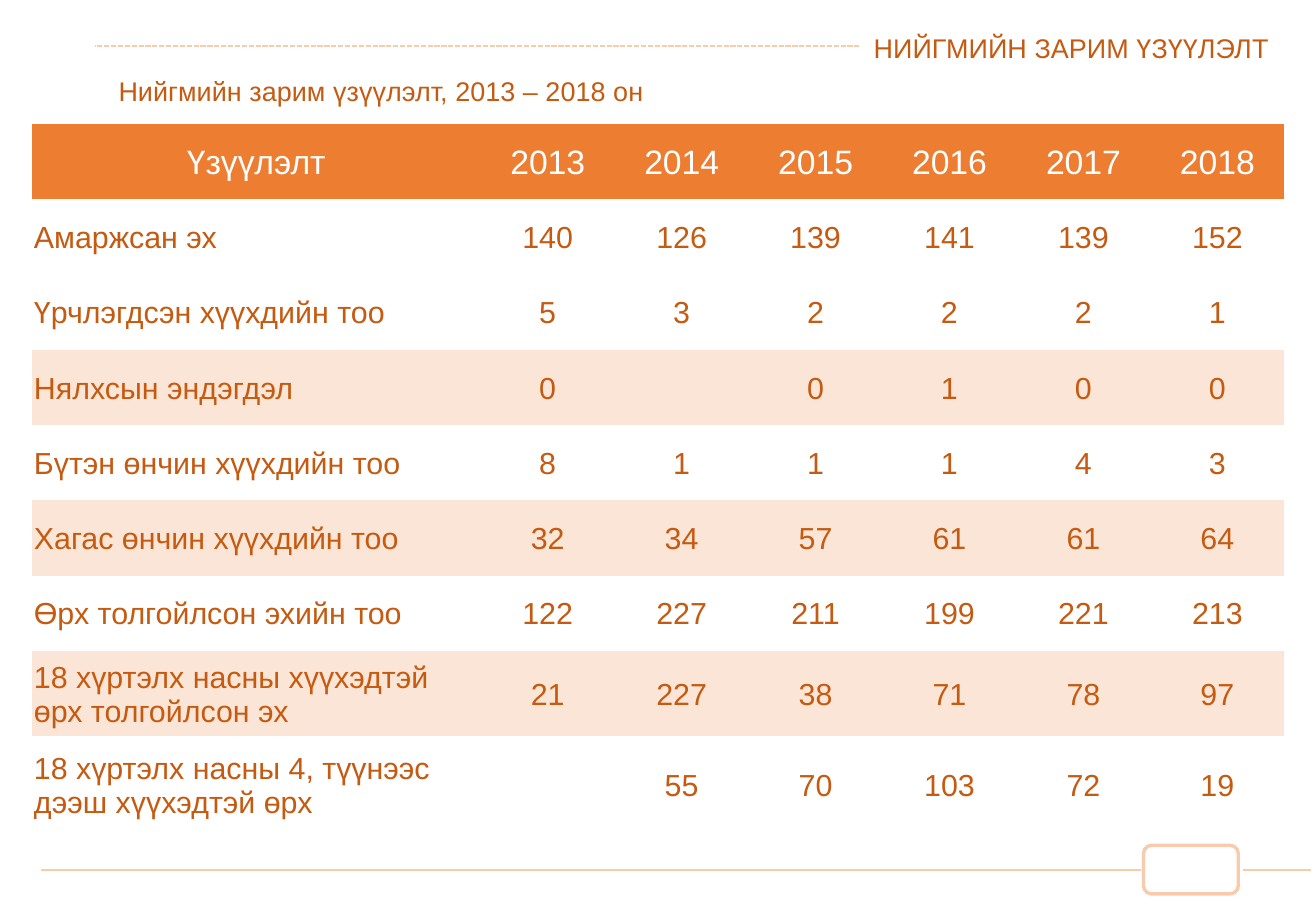
from pptx import Presentation
from pptx.dml.color import RGBColor
from pptx.enum.dml import MSO_LINE
from pptx.enum.shapes import MSO_CONNECTOR, MSO_SHAPE
from pptx.enum.text import MSO_ANCHOR, MSO_AUTO_SIZE, PP_ALIGN
from pptx.oxml.ns import qn
from pptx.util import Inches, Pt
from lxml import etree

# Content
TITLE = "НИЙГМИЙН ЗАРИМ ҮЗҮҮЛЭЛТ"
SUBTITLE = "Нийгмийн зарим үзүүлэлт, 2013 – 2018 он"
ROWS = [
    ("Үзүүлэлт", 2013, 2014, 2015, 2016, 2017, 2018),
    ("Амаржсан эх", 140, 126, 139, 141, 139, 152),
    ("Үрчлэгдсэн хүүхдийн тоо", 5, 3, 2, 2, 2, 1),
    ("Нялхсын эндэгдэл", 0, None, 0, 1, 0, 0),
    ("Бүтэн өнчин хүүхдийн тоо", 8, 1, 1, 1, 4, 3),
    ("Хагас өнчин хүүхдийн тоо", 32, 34, 57, 61, 61, 64),
    ("Өрх толгойлсон эхийн тоо", 122, 227, 211, 199, 221, 213),
    ("18 хүртэлх насны хүүхэдтэй өрх толгойлсон эх", 21, 227, 38, 71, 78, 97),
    ("18 хүртэлх насны 4, түүнээс дээш хүүхэдтэй өрх", None, 55, 70, 103, 72, 19),
]
SHADED_ROWS = (3, 5, 7)

THEME = {
    "font": "Arial", "caption": 8, "header": 10, "body": 9,
    "text": RGBColor.from_string("C55A11"),
    "accent": RGBColor.from_string("ED7D31"),
    "band": RGBColor.from_string("FBE5D6"),
    "rule": RGBColor.from_string("F8CBAD"),
    "white": RGBColor.from_string("FFFFFF"),
}
NO_STYLE = "{2D5ABB26-0587-4C30-8999-92F81FD0307C}"

# Layout in inches
TABLE_X, TABLE_Y, TABLE_W = 0.13, 0.51, 5.16
LABEL_W = 1.85
ROW_HEIGHTS = [0.31] * 7 + [0.35, 0.4]
FOOTER_Y = 3.58

prs = Presentation()
prs.slide_width, prs.slide_height = Inches(5.42), Inches(3.75)
s = prs.slides.add_slide(prs.slide_layouts[6])


def add_run(p, text, size, color):
    r = p.add_run()
    r.text = text
    r.font.name, r.font.size = THEME["font"], Pt(size)
    r.font.color.rgb = color


def add_caption(text, x, y, w, wrap):
    tf = s.shapes.add_textbox(Inches(x), Inches(y), Inches(w), Inches(0.24)).text_frame
    tf.word_wrap = wrap
    tf.auto_size = MSO_AUTO_SIZE.SHAPE_TO_FIT_TEXT
    add_run(tf.paragraphs[0], text, THEME["caption"], THEME["text"])


def add_rule(x1, x2, y, dash=None):
    line = s.shapes.add_connector(
        MSO_CONNECTOR.STRAIGHT, Inches(x1), Inches(y), Inches(x2), Inches(y))
    line.line.color.rgb, line.line.width = THEME["rule"], Pt(0.5)
    if dash:
        line.line.dash_style = dash
    etree.SubElement(line._element.spPr, qn("a:effectLst"))


# Heading
add_rule(3.54, 0.39, 0.19, MSO_LINE.SQUARE_DOT)
add_caption(TITLE, 3.5, 0.08, 1.84, True)
add_caption(SUBTITLE, 0.39, 0.26, 2.4, False)

# Table
table = s.shapes.add_table(
    len(ROWS), len(ROWS[0]), Inches(TABLE_X), Inches(TABLE_Y),
    Inches(TABLE_W), Inches(sum(ROW_HEIGHTS))).table
table.first_row = table.horz_banding = False
table._tbl.tblPr.find(qn("a:tableStyleId")).text = NO_STYLE

years = len(ROWS[0]) - 1
for i, col in enumerate(table.columns):
    col.width = Inches((TABLE_W - LABEL_W) / years if i else LABEL_W)

for i, values in enumerate(ROWS):
    table.rows[i].height = Inches(ROW_HEIGHTS[i])
    header = i == 0
    fill = "accent" if header else "band" if i in SHADED_ROWS else "white"
    size = THEME["header" if header else "body"]
    color = THEME["white" if header else "text"]
    for j, value in enumerate(values):
        cell = table.cell(i, j)
        cell.fill.solid()
        cell.fill.fore_color.rgb = THEME[fill]
        cell.vertical_anchor = MSO_ANCHOR.MIDDLE
        cell.margin_left = cell.margin_right = cell.margin_top = Inches(0.01)
        cell.margin_bottom = 0
        p = cell.text_frame.paragraphs[0]
        p.alignment = PP_ALIGN.CENTER if header or j else PP_ALIGN.LEFT
        if value is not None:
            add_run(p, str(value), size, color)

# Footer
page_box = s.shapes.add_shape(
    MSO_SHAPE.ROUNDED_RECTANGLE, Inches(4.71), Inches(FOOTER_Y - 0.1),
    Inches(0.39), Inches(0.2))
page_box.shadow.inherit = False
page_box.fill.background()
page_box.line.color.rgb, page_box.line.width = THEME["rule"], Pt(1)
for x1, x2 in ((0.17, 4.7), (5.12, 5.4)):
    add_rule(x1, x2, FOOTER_Y)

prs.save("out.pptx")
